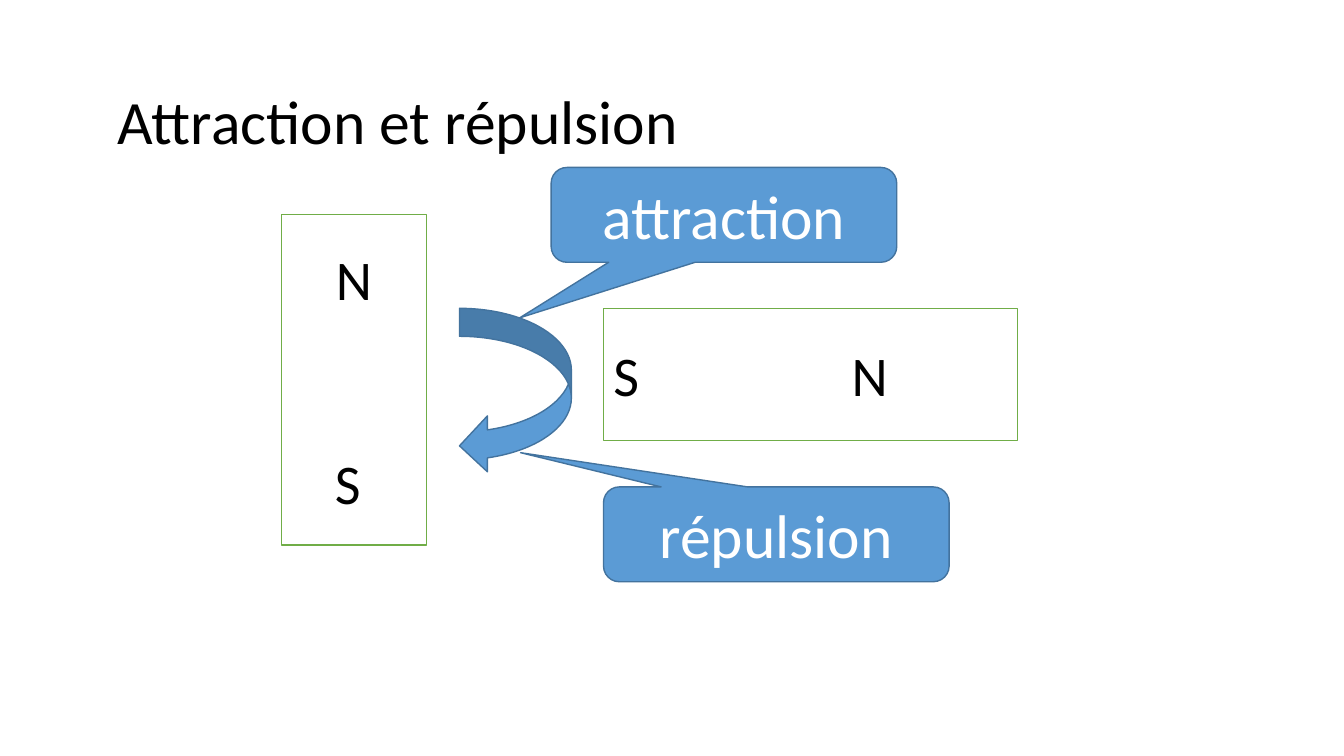
from lxml.etree import SubElement as Sub
from pptx import Presentation
from pptx.dml.color import RGBColor as Rgb
from pptx.enum.shapes import MSO_SHAPE as Kind
from pptx.enum.text import MSO_ANCHOR as Anchor, PP_ALIGN as Align
from pptx.oxml.ns import qn
from pptx.util import Cm, Pt

BLACK = Rgb(0x00, 0x00, 0x00)
WHITE = Rgb(0xFF, 0xFF, 0xFF)
BLUE = Rgb(0x5B, 0x9B, 0xD5)
NAVY = Rgb(0x43, 0x73, 0x9E)
GREEN = Rgb(0x70, 0xAD, 0x47)

BIG = {"name": "Calibri", "size": Pt(44)}
POLE = {"name": "Calibri", "size": Pt(40)}


def write(frame, lines, style, color, align):
    """Fill a text frame, one paragraph per line."""
    frame.word_wrap = True
    frame.vertical_anchor = Anchor.MIDDLE
    for num, line in enumerate(lines):
        para = frame.add_paragraph() if num else frame.paragraphs[0]
        para.alignment = align
        run = para.add_run()
        run.text = line
        for key, val in style.items():
            setattr(run.font, key, val)
        run.font.color.rgb = color
    return frame.paragraphs


def draw(slide, kind, box, fill, edge):
    """Add a filled and outlined shape without shadow."""
    shape = slide.shapes.add_shape(kind, *map(Cm, box))
    shape.shadow.inherit = False
    shape.fill.solid()
    shape.fill.fore_color.rgb = fill
    shape.line.color.rgb = edge
    shape.line.width = Pt(1)
    return shape


def title(slide, box, text):
    frame = slide.shapes.add_textbox(*map(Cm, box)).text_frame
    write(frame, [text], BIG, BLACK, Align.LEFT)[0].line_spacing = 0.9


def callout(slide, box, text, tip):
    """Label whose tip is given as shares of its size from its centre."""
    shape = draw(slide, Kind.ROUNDED_RECTANGULAR_CALLOUT, box, BLUE, NAVY)
    for num, share in enumerate(tip):
        shape.adjustments[num] = share
    write(shape.text_frame, [text], BIG, WHITE, Align.CENTER)


def upright(slide, box):
    """Standing magnet, with two lines of space between its poles."""
    shape = draw(slide, Kind.RECTANGLE, box, WHITE, GREEN)
    paras = write(shape.text_frame, ["N", "S "], POLE, BLACK, Align.CENTER)
    paras[1].space_before = Pt(97.6)


def flat(slide, box):
    """Lying magnet, with its second pole on a tab stop."""
    shape = draw(slide, Kind.RECTANGLE, box, WHITE, GREEN)
    para = write(shape.text_frame, ["S\tN"], POLE, BLACK, Align.LEFT)[0]
    tabs = Sub(para._p.get_or_add_pPr(), qn("a:tabLst"))
    Sub(tabs, qn("a:tab"), pos=str(Cm(box[2] * 0.575)), algn="l")


def scene(slide, box):
    """Two magnets, the turning arrow and its two labels."""
    left, top, wide, high = box
    mid = left + 8.12  # left side of the lying magnet
    row = top + 3.55  # top of the lying magnet and of the arrow
    size = (8.71, 2.39)
    callout(slide, (mid - 1.32, top, *size), "attraction", (-0.591, 1.086))
    callout(slide, (mid, top + 8.05, *size), "répulsion", (-0.74, -0.861))
    upright(slide, (left, top + 1.19, 3.66, high - 2.11))
    flat(slide, (mid, row, wide - 8.12, 3.33))
    draw(slide, Kind.CURVED_LEFT_ARROW, (left + 4.49, row, 2.82, 4.17), BLUE, NAVY)


def main():
    deck = Presentation()
    deck.slide_width, deck.slide_height = Cm(33.87), Cm(19.05)
    slide = deck.slides.add_slide(deck.slide_layouts[6])
    title(slide, (2.72, 1.3, 29.21, 3.68), "Attraction et répulsion")
    scene(slide, (7.09, 4.22, 18.56, 10.44))
    deck.save("out.pptx")


if __name__ == "__main__":
    main()
